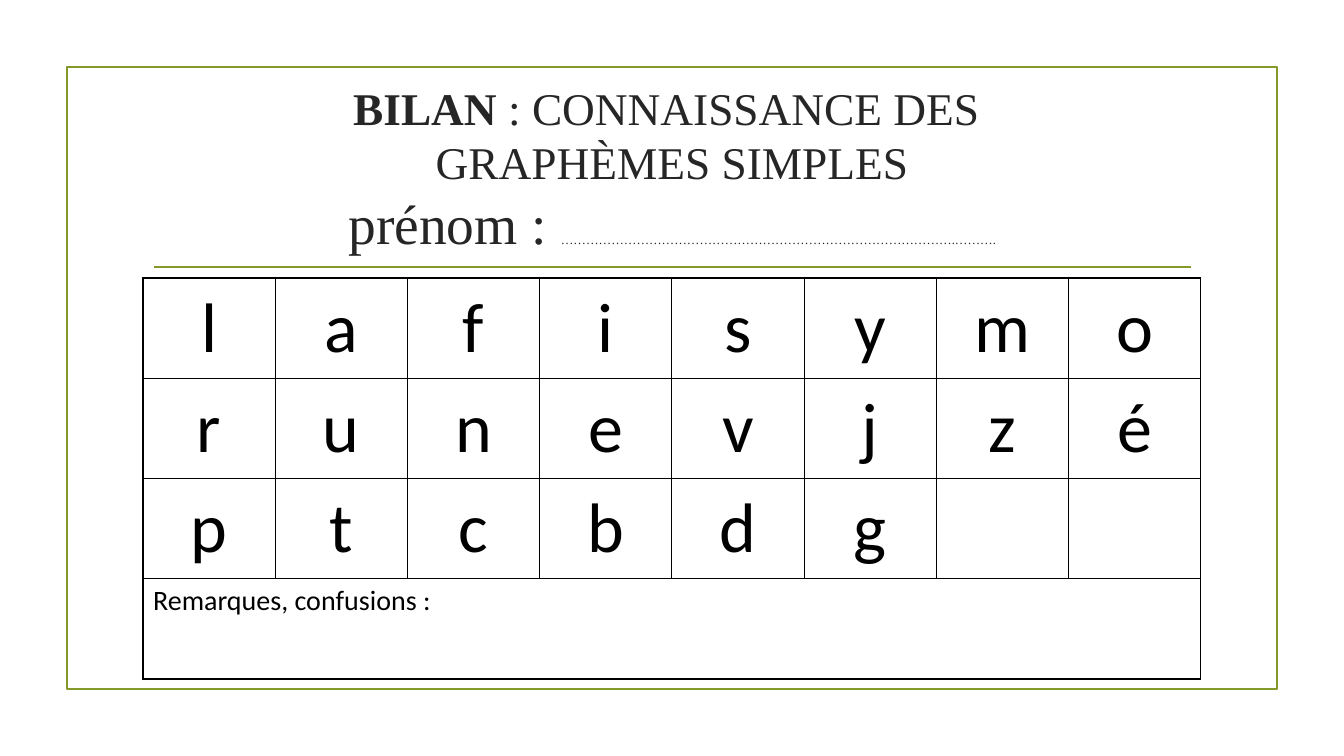
"""Build a one-slide assessment sheet for simple graphemes."""
import dataclasses

import lxml.etree
import pptx
import pptx.dml.color
import pptx.enum.shapes
import pptx.enum.text
import pptx.oxml.ns
import pptx.util

ALIGN = pptx.enum.text.PP_ALIGN
ANCHOR = pptx.enum.text.MSO_ANCHOR


@dataclasses.dataclass(frozen=True)
class Theme:
    olive: str = "83992A"
    ink: str = "262626"
    black: str = "000000"
    white: str = "FFFFFF"
    serif: str = "Times New Roman"
    sans: str = "Calibri"
    head: float = 32.4
    name: float = 39.6
    dots: float = 9
    gap: float = 35
    letter: float = 50
    note: float = 20
    rule: float = 1.25
    grid: float = 1


def px(count):
    return round(count * 914400 / 100.8)


def color(code):
    return pptx.dml.color.RGBColor.from_string(code)


def apply(target, values):
    for key, value in values.items():
        setattr(target, key, value)


def child(parent, tag, **attrs):
    return lxml.etree.SubElement(parent, pptx.oxml.ns.qn(tag), attrs)


class Sheet:
    def __init__(self, slide, theme):
        self.slide = slide
        self.theme = theme

    def font(self, run, face, size, tint, bold=False):
        apply(run.font, {"name": face, "size": pptx.util.Pt(size), "bold": bold})
        run.font.color.rgb = color(tint)

    def stroke(self, line):
        line.color.rgb = color(self.theme.olive)
        line.width = pptx.util.Pt(self.theme.rule)

    def frame(self, *box):
        kind = pptx.enum.shapes.MSO_SHAPE.RECTANGLE
        shape = self.slide.shapes.add_shape(kind, *map(px, box))
        shape.shadow.inherit = False
        shape.fill.background()
        self.stroke(shape.line)

    def rule(self, *ends):
        kind = pptx.enum.shapes.MSO_CONNECTOR.STRAIGHT
        line = self.slide.shapes.add_connector(kind, *map(px, ends))
        self.stroke(line.line)
        child(line._element.spPr, "a:effectLst")

    def title(self, box, lines):
        look = self.theme
        frame = self.slide.shapes.add_textbox(*map(px, box)).text_frame
        apply(frame, {"word_wrap": True, "vertical_anchor": ANCHOR.MIDDLE})
        para = frame.paragraphs[0]
        para.alignment = ALIGN.CENTER
        for row, parts in enumerate(lines):
            if row:
                para.add_line_break()
                props = child(para._p[-1], "a:rPr", sz=str(look.gap * 100))
                child(props, "a:latin", typeface=look.serif)
            for text, size, bold in parts:
                run = para.add_run()
                run.text = text
                self.font(run, look.serif, size, look.ink, bold)

    def cell(self, cell, text, size, align, anchor):
        look = self.theme
        props = cell._tc.get_or_add_tcPr()
        for side in ("a:lnL", "a:lnR", "a:lnT", "a:lnB"):
            edge = child(props, side, w=str(pptx.util.Pt(look.grid)))
            child(child(edge, "a:solidFill"), "a:srgbClr", val=look.black)
        cell.fill.solid()
        cell.fill.fore_color.rgb = color(look.white)
        cell.vertical_anchor = anchor
        if text:
            para = cell.text_frame.paragraphs[0]
            para.alignment = align
            run = para.add_run()
            run.text = text
            self.font(run, look.sans, size, look.black)

    def table(self, box, rows, note):
        look = self.theme
        count, wide = len(rows) + 1, len(rows[0])
        grid = self.slide.shapes.add_table(count, wide, *map(px, box)).table
        apply(grid, {"first_row": False, "horz_banding": False})
        grid.cell(count - 1, 0).merge(grid.cell(count - 1, wide - 1))
        for row, letters in enumerate(rows):
            for col, text in enumerate(letters.ljust(wide)):
                self.cell(grid.cell(row, col), text.strip(), look.letter,
                          ALIGN.CENTER, ANCHOR.MIDDLE)
        for col in range(wide):
            self.cell(grid.cell(count - 1, col), "" if col else note,
                      look.note, ALIGN.LEFT, ANCHOR.TOP)


def main():
    deck = pptx.Presentation()
    apply(deck, {"slide_width": px(1344), "slide_height": px(756)})
    look = Theme()
    sheet = Sheet(deck.slides.add_slide(deck.slide_layouts[6]), look)
    sheet.frame(67, 67, 1210, 622)
    sheet.rule(154, 267, 1191, 267)
    sheet.title((143, 69, 1058, 197), [
        [("BILAN", look.head, True), (" : CONNAISSANCE DES ", look.head, False)],
        [("GRAPHÈMES SIMPLES", look.head, False)],
        [("prénom : ", look.name, False),
         ("………………………………………………………………………………….……….", look.dots, False)],
    ])
    sheet.table((143, 278, 1058, 401), ["lafisymo", "runevjzé", "ptcbdg"],
                "Remarques, confusions :")
    deck.save("out.pptx")


if __name__ == "__main__":
    main()
